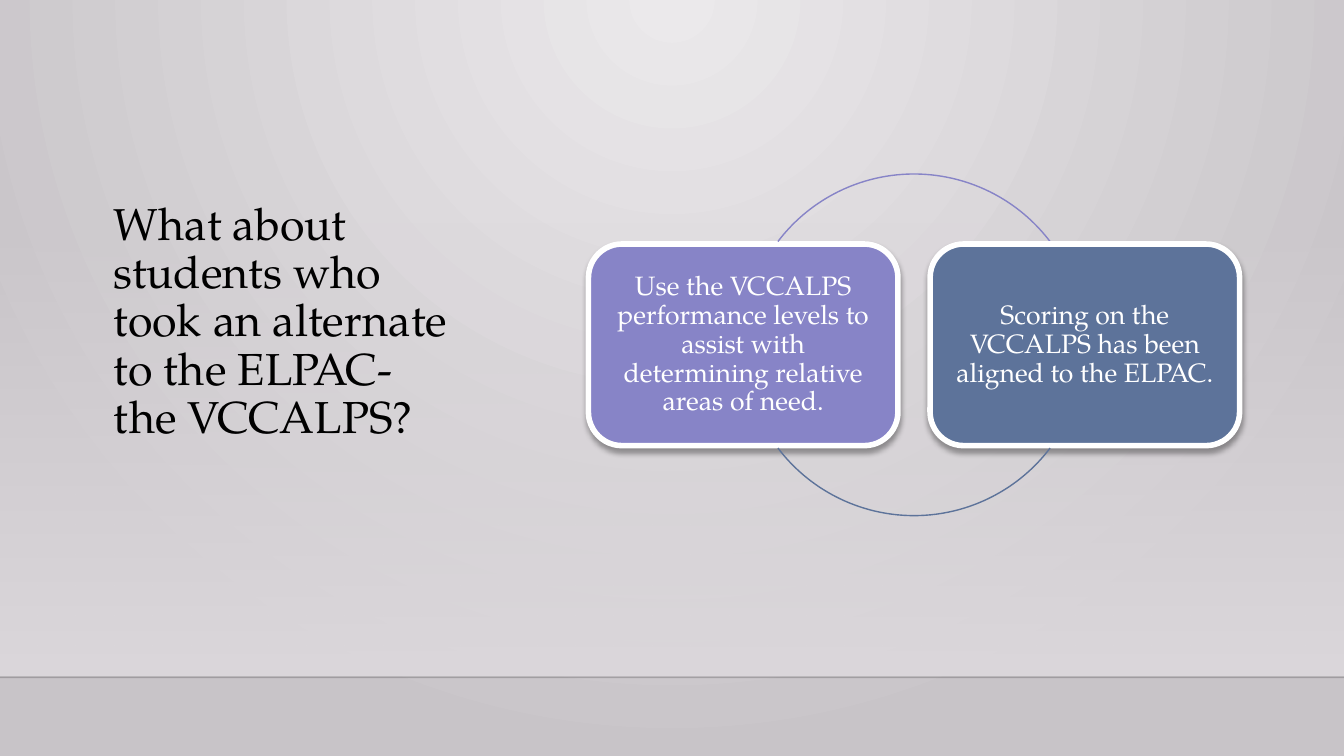
from dataclasses import dataclass

from lxml import etree
from pptx import Presentation
from pptx.dml.color import RGBColor
from pptx.enum.shapes import MSO_CONNECTOR, MSO_SHAPE
from pptx.enum.text import MSO_ANCHOR, PP_ALIGN
from pptx.oxml.ns import qn
from pptx.util import Cm, Pt

RECT, ROUND, ARC = MSO_SHAPE.RECTANGLE, MSO_SHAPE.ROUNDED_RECTANGLE, MSO_SHAPE.ARC
STRAIGHT = MSO_CONNECTOR.STRAIGHT
LEFT, CENTER = PP_ALIGN.LEFT, PP_ALIGN.CENTER
TOP, MIDDLE = MSO_ANCHOR.TOP, MSO_ANCHOR.MIDDLE

BLACK = RGBColor(0x00, 0x00, 0x00)
WHITE = RGBColor(0xFF, 0xFF, 0xFF)
LIGHT = RGBColor(0xEB, 0xE9, 0xEB)
GREY = RGBColor(0xC8, 0xC4, 0xC8)
WALL = RGBColor(0xDC, 0xD8, 0xDC)
VIOLET = RGBColor(0x87, 0x84, 0xC7)
BLUE = RGBColor(0x5D, 0x73, 0x9A)

FACE = "TeX Gyre Pagella"
WIDTH, HEIGHT = 33.87, 19.05
CARD_X, CARD_Y, CARD_W, CARD_H = 14.83, 6.15, 7.8, 5.08
STEP = 8.61  # distance between cards, also the ring's diameter


@dataclass
class Card:
    text: str
    color: RGBColor
    start: float  # arc angles in degrees, clockwise from the right
    end: float


CARDS = [
    Card("Use the VCCALPS performance levels to assist with determining "
         "relative areas of need.", VIOLET, 217.2, 322.8),
    Card("Scoring on the VCCALPS has been aligned to the ELPAC.", BLUE, 37.2, 142.8),
]
TITLE = "What about students who took an alternate to the ELPAC- the VCCALPS?"

TITLE_FORM = {
    "frame": {"word_wrap": True, "vertical_anchor": TOP},
    "para": {"alignment": LEFT, "line_spacing": 0.9},
    "font": {"name": FACE, "size": Pt(32)},
}
CARD_FORM = {
    "frame": {"word_wrap": True, "vertical_anchor": MIDDLE,
              "margin_left": Cm(0.2), "margin_right": Cm(0.2),
              "margin_top": Cm(0.2), "margin_bottom": Cm(0.2)},
    "para": {"alignment": CENTER, "line_spacing": 0.9, "space_after": Pt(6.65)},
    "font": {"name": FACE, "size": Pt(19)},
}


def apply(target, values: dict) -> None:
    for name, value in values.items():
        setattr(target, name, value)


def write(shape, text: str, form: dict, color: RGBColor) -> None:
    frame = shape.text_frame
    para = frame.paragraphs[0]
    run = para.add_run()
    run.text = text
    apply(frame, form["frame"])
    apply(para, form["para"])
    apply(run.font, form["font"])
    run.font.color.rgb = color


def add(parent, tag: str, **attrs):
    """Append a drawing element with the given attributes."""
    return etree.SubElement(parent, qn(tag), {k: str(v) for k, v in attrs.items()})


def blend(fill, first: RGBColor, last: RGBColor) -> None:
    """Turn a fill into a gradient of two colours."""
    fill.gradient()
    for stop, color in zip(fill.gradient_stops, (first, last)):
        stop.color.rgb = color


def draw_back(slide) -> None:
    blend(slide.background.fill, LIGHT, GREY)
    grad = next(slide.element.iter(qn("a:gradFill")))
    grad.remove(grad.find(qn("a:lin")))
    path = add(grad, "a:path", path="circle")
    add(path, "a:fillToRect", l=43000, t=0, r=43000, b=100000)

    wall = slide.shapes.add_shape(RECT, 0, Cm(5.59), Cm(WIDTH), Cm(11.43))
    wall.shadow.inherit = False
    wall.line.fill.background()
    blend(wall.fill, WALL, WALL)
    wall.fill.gradient_angle = 270
    add(next(wall.element.iter(qn("a:srgbClr"))), "a:alpha", val=0)

    edge = slide.shapes.add_connector(STRAIGHT, 0, Cm(17.07), Cm(WIDTH), Cm(17.07))
    edge.line.color.rgb = BLACK
    edge.line.width = Pt(1)
    add(next(edge.element.iter(qn("a:srgbClr"))), "a:alpha", val=20000)
    add(edge.element.spPr, "a:effectLst")


def draw_card(slide, card: Card, left: float) -> None:
    box = slide.shapes.add_shape(ROUND, Cm(left), Cm(CARD_Y), Cm(CARD_W), Cm(CARD_H))
    box.fill.solid()
    box.fill.fore_color.rgb = card.color
    box.line.color.rgb = WHITE
    box.line.width = Pt(4)
    box.shadow.inherit = False
    shade = add(box.element.spPr.find(qn("a:effectLst")), "a:outerShdw",
                blurRad=Pt(4), dist=Pt(3), dir=5400000, rotWithShape=0)
    add(add(shade, "a:srgbClr", val=BLACK), "a:alpha", val=35000)
    write(box, card.text, CARD_FORM, WHITE)


def draw_arc(slide, card: Card) -> None:
    left = CARD_X + CARD_W / 2
    top = CARD_Y + (CARD_H - STEP) / 2
    arc = slide.shapes.add_shape(ARC, Cm(left), Cm(top), Cm(STEP), Cm(STEP))
    for i, angle in enumerate((card.start, card.end)):
        arc.adjustments[i] = angle * 0.6
    arc.fill.background()
    arc.line.color.rgb = card.color
    arc.line.width = Pt(1)
    arc.shadow.inherit = False


def main() -> None:
    deck = Presentation()
    deck.slide_width, deck.slide_height = Cm(WIDTH), Cm(HEIGHT)
    slide = deck.slides.add_slide(deck.slide_layouts[6])
    draw_back(slide)
    title = slide.shapes.add_textbox(Cm(2.62), Cm(4.95), Cm(9.09), Cm(7.42))
    write(title, TITLE, TITLE_FORM, BLACK)
    for i, card in enumerate(CARDS):
        draw_card(slide, card, CARD_X + i * STEP)
        draw_arc(slide, card)
    deck.save("out.pptx")


if __name__ == "__main__":
    main()
